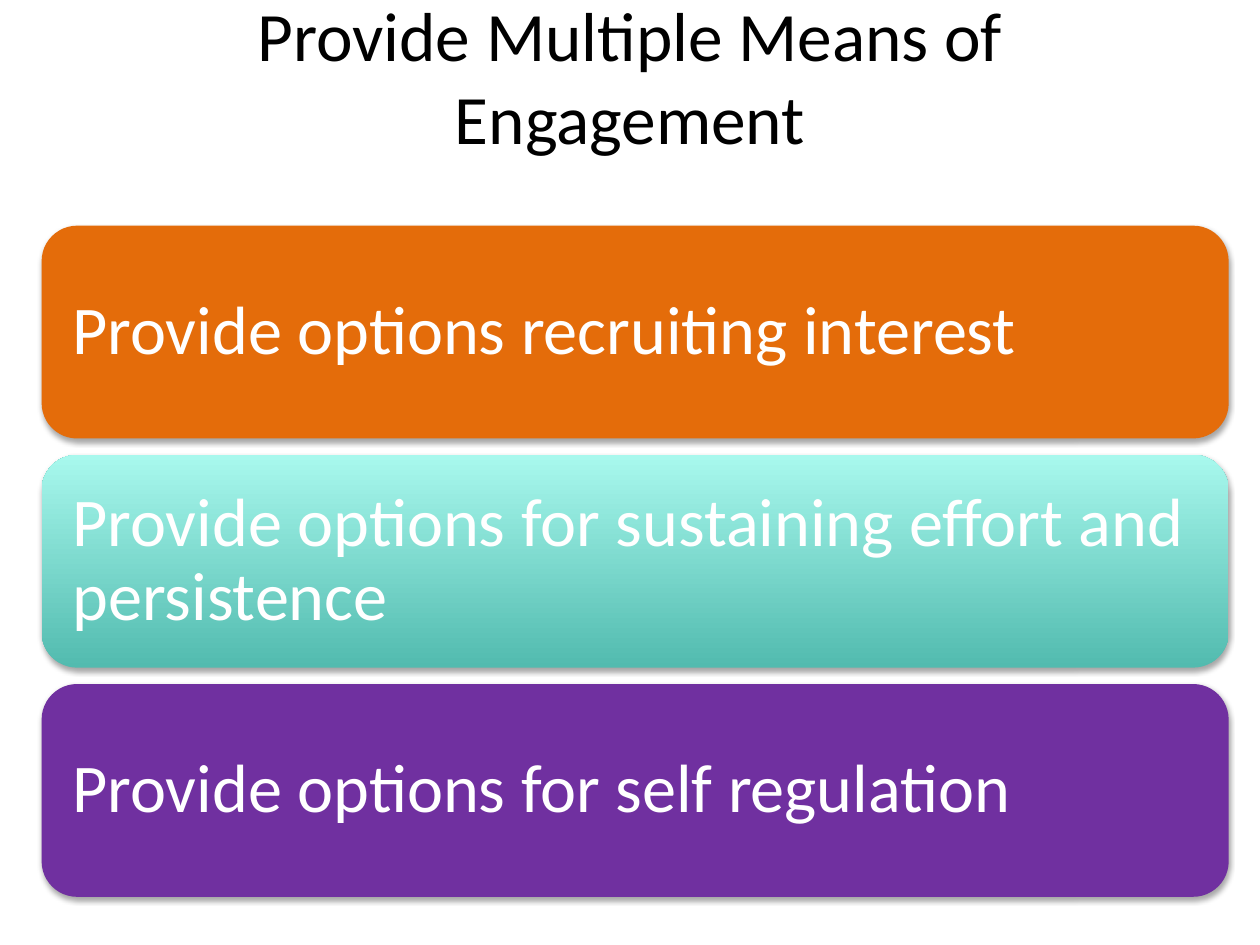
from dataclasses import dataclass

from lxml import etree
from pptx import Presentation
from pptx.dml.color import RGBColor
from pptx.enum.shapes import MSO_SHAPE
from pptx.enum.text import MSO_ANCHOR, MSO_AUTO_SIZE, PP_ALIGN
from pptx.oxml.ns import qn
from pptx.util import Cm, Pt

ROUNDED = MSO_SHAPE.ROUNDED_RECTANGLE
MIDDLE = MSO_ANCHOR.MIDDLE
NO_AUTOFIT = MSO_AUTO_SIZE.NONE
LEFT, CENTER = PP_ALIGN.LEFT, PP_ALIGN.CENTER

FONT = "Calibri"
COLORS = {
    "black": "000000",
    "white": "FFFFFF",
    "orange": "E46C0A",
    "teal": "52BBAF",
    "aqua": "A8F8ED",
    "purple": "7030A0",
}

# Bar stack, in centimetres
BAR_LEFT, BAR_TOP = 0.84, 4.55
BAR_WIDTH, BAR_HEIGHT = 23.93, 4.29
BAR_PITCH = 4.62


@dataclass
class Bar:
    text: str
    colors: tuple[str, ...]  # one for a solid fill, two for bottom to top


BARS = [
    Bar("Provide options recruiting interest", ("orange",)),
    Bar("Provide options for sustaining effort and persistence", ("teal", "aqua")),
    Bar("Provide options for self regulation", ("purple",)),
]


def rgb(name: str) -> RGBColor:
    return RGBColor.from_string(COLORS[name])


def write_text(box, text: str, size: float, color: str, align) -> None:
    frame = box.text_frame
    frame.text = text
    frame.word_wrap = True
    frame.auto_size = NO_AUTOFIT
    frame.vertical_anchor = MIDDLE
    para = frame.paragraphs[0]
    para.alignment = align
    para.font.name = FONT
    para.font.size = Pt(size)
    para.font.color.rgb = rgb(color)


def set_insets(box, left: float, top: float, right: float, bottom: float) -> None:
    frame = box.text_frame
    frame.margin_left, frame.margin_top = Cm(left), Cm(top)
    frame.margin_right, frame.margin_bottom = Cm(right), Cm(bottom)


def add_shadow(box) -> None:
    box.shadow.inherit = False
    effects = box.element.spPr.find(qn("a:effectLst"))
    shadow = etree.SubElement(
        effects, qn("a:outerShdw"), blurRad=str(Pt(3.1)), dist=str(Pt(1.8)),
        dir=str(90 * 60000), rotWithShape="0")
    color = etree.SubElement(shadow, qn("a:srgbClr"), val=COLORS["black"])
    etree.SubElement(color, qn("a:alpha"), val="35000")


def add_bar(slide, bar: Bar, top: float) -> None:
    box = slide.shapes.add_shape(
        ROUNDED, Cm(BAR_LEFT), Cm(top), Cm(BAR_WIDTH), Cm(BAR_HEIGHT))
    if len(bar.colors) == 1:
        box.fill.solid()
        box.fill.fore_color.rgb = rgb(bar.colors[0])
    else:
        box.fill.gradient()
        box.fill.gradient_angle = 90
        for stop, name in zip(box.fill.gradient_stops, bar.colors):
            stop.color.rgb = rgb(name)
    box.line.fill.background()
    add_shadow(box)
    write_text(box, bar.text, 39, "white", LEFT)
    set_insets(box, 0.41, 0.41, 0.41, 0.41)
    box.text_frame.paragraphs[0].line_spacing = 0.9


def main() -> None:
    deck = Presentation()
    deck.slide_width, deck.slide_height = Cm(25.4), Cm(19.05)
    slide = deck.slides.add_slide(deck.slide_layouts[5])

    # Title, raised within its box by a deep bottom inset
    title = slide.shapes.title
    title.left, title.top = Cm(1.27), Cm(0.76)
    title.width, title.height = Cm(22.86), Cm(3.18)
    write_text(title, "Provide Multiple Means of Engagement", 39.6, "black", CENTER)
    set_insets(title, 0.6, 0.13, 0.6, 1.8)

    # Stacked bars
    for index, bar in enumerate(BARS):
        add_bar(slide, bar, BAR_TOP + index * BAR_PITCH)

    deck.save("out.pptx")


if __name__ == "__main__":
    main()
